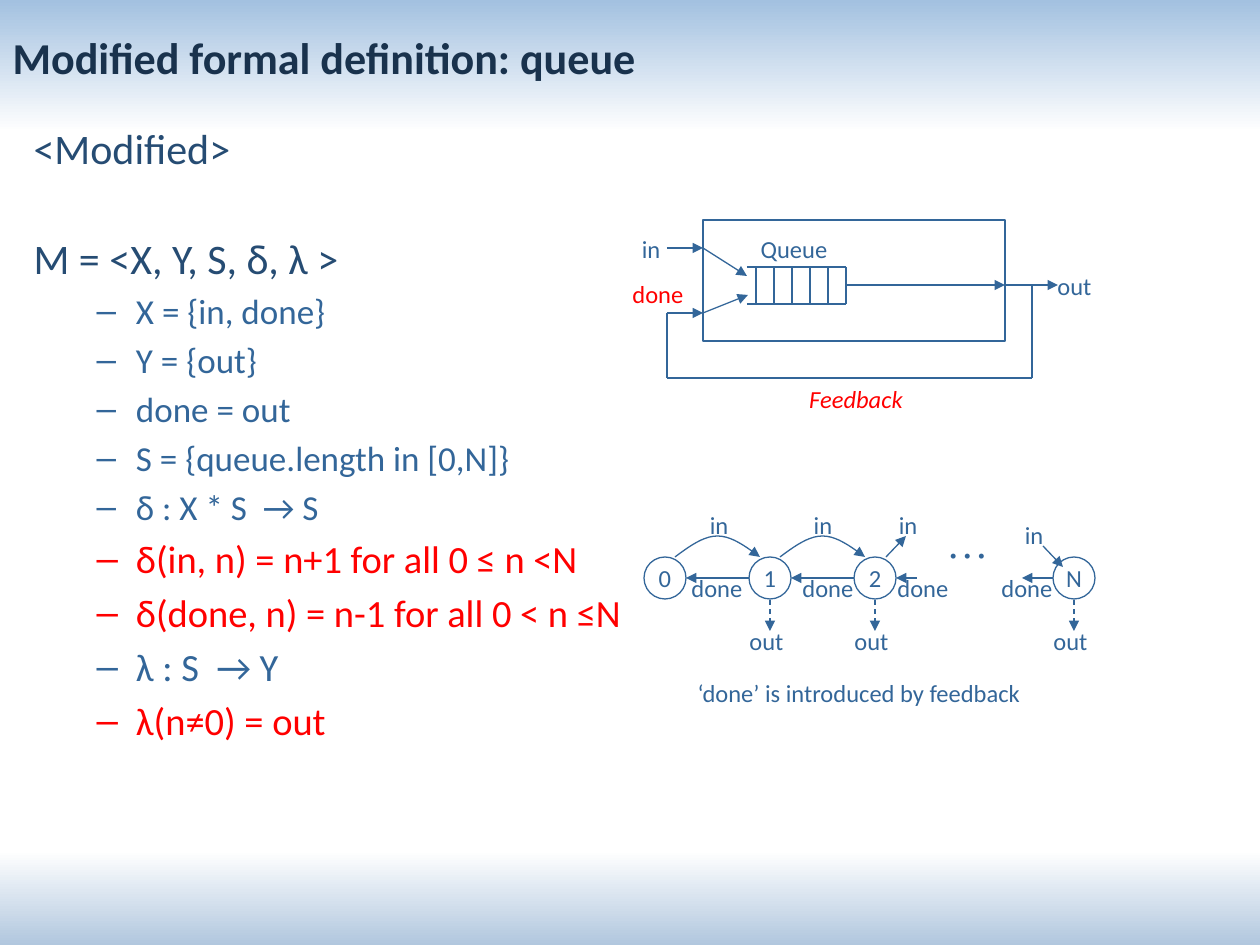
from copy import deepcopy
from itertools import pairwise

from lxml.etree import SubElement
from pptx import Presentation
from pptx.dml.color import RGBColor as RGB
from pptx.enum.dml import MSO_LINE as Dash
from pptx.enum.shapes import MSO_CONNECTOR as Link, MSO_SHAPE as Form
from pptx.enum.text import MSO_ANCHOR as Anchor, MSO_AUTO_SIZE as Fit, PP_ALIGN as Align
from pptx.oxml.ns import qn
from pptx.util import Inches, Pt

UNIT = Inches(1) / 126
FONT = "Calibri"
BLUE = RGB(0x33, 0x66, 0x99)
NAVY = RGB(0x26, 0x4C, 0x73)
DARK = RGB(0x19, 0x32, 0x4D)
RED = RGB(0xFF, 0x00, 0x00)
SKY = RGB(0xA3, 0xC1, 0xE0)
HAZE = RGB(0xB1, 0xC7, 0xDE)
WHITE = RGB(0xFF, 0xFF, 0xFF)

RADIUS = 21
MID = 578
STATES = {"0": 665, "1": 770, "2": 875, "N": 1074}
ITEMS = [
    ("X = {in, done}", 20, BLUE),
    ("Y = {out}", 20, BLUE),
    ("done = out", 20, BLUE),
    ("S = {queue.length in [0,N]}", 20, BLUE),
    ("δ : X * S  → S", 20, BLUE),
    ("δ(in, n) = n+1 for all 0 ≤ n <N", 22, RED),
    ("δ(done, n) = n-1 for all 0 < n ≤N", 22, RED),
    ("λ : S  → Y", 22, BLUE),
    ("λ(n≠0) = out", 22, RED),
]


def px(*nums):
    return [round(n * UNIT) for n in nums]


def style(para, size, color, face=FONT):
    for run in para.runs:
        run.font.size, run.font.name = Pt(size), face
        run.font.color.rgb = color


def place(shape, x, y, w, h):
    shape.left, shape.top, shape.width, shape.height = px(x, y, w, h)


def ink(line, tip=False):
    """Give a line its colour and width, and an arrowhead if asked."""
    line.color.rgb, line.width = BLUE, Pt(0.75)
    if tip:
        SubElement(line._get_or_add_ln(), qn("a:tailEnd"), type="triangle")


def stroke(slide, x1, y1, x2, y2, tip=False, dash=False):
    link = slide.shapes.add_connector(Link.STRAIGHT, *px(x1, y1, x2, y2))
    SubElement(link._element.spPr, qn("a:effectLst"))
    if dash:
        link.line.dash_style = Dash.DASH
    ink(link.line, tip)


def hollow(shape, tip=False):
    shape.shadow.inherit = False
    shape.fill.background()
    ink(shape.line, tip)


def center(frame, text, color=BLUE):
    frame.word_wrap = False
    frame.vertical_anchor = Anchor.MIDDLE
    para = frame.paragraphs[0]
    para.text, para.alignment = text, Align.CENTER
    style(para, 14, color)
    return para


def label(slide, text, x, y, w, color=BLUE):
    frame = slide.shapes.add_textbox(*px(x, y, w, 42)).text_frame
    frame.auto_size = Fit.SHAPE_TO_FIT_TEXT
    return center(frame, text, color)


def arc(slide, x, y, w, h):
    """Draw an arched arrow from (x, y) to (x + w, y), h high."""
    half = 10
    spots = []
    for i in range(2 * half + 1):
        t = 1 - abs(i / half - 1)
        spots.append(px(x + w * i / (2 * half), y - h * (1.5 * t - 0.5 * t**3)))
    path = slide.shapes.build_freeform(*spots[0])
    path.add_line_segments(spots[1:], close=False)
    hollow(path.convert_to_shape(), tip=True)


def backdrop(slide):
    fill = slide.background.fill
    fill.gradient()
    fill.gradient_angle = 270
    stops = slide._element.find(".//" + qn("a:gsLst"))
    stops.extend([deepcopy(stop) for stop in stops])
    marks = [(0, SKY), (0.14, WHITE), (0.9, WHITE), (1, HAZE)]
    for stop, (spot, color) in zip(fill.gradient_stops, marks):
        stop.position, stop.color.rgb = spot, color


def heading(slide):
    title = slide.shapes.title
    place(title, 0, 0, 696, 94)
    frame = title.text_frame
    frame.auto_size, frame.vertical_anchor = Fit.NONE, Anchor.MIDDLE
    frame.margin_top = Inches(0.2)
    para = frame.paragraphs[0]
    para.text, para.alignment = "Modified formal definition: queue", Align.LEFT
    style(para, 25.2, DARK)
    para.runs[0].font.bold = True


def body(slide):
    shape = slide.placeholders[1]
    place(shape, 21, 116, 1218, 777)
    frame = shape.text_frame
    frame.auto_size = Fit.NONE
    heads = [("<Modified>", 0), ("M = <X, Y, S, δ, λ >", 34)]
    for i, (text, gap) in enumerate(heads):
        para = frame.add_paragraph() if i else frame.paragraphs[0]
        para.text = text
        props = para._p.get_or_add_pPr()
        props.set("marL", "0")
        props.set("indent", "0")
        SubElement(props, qn("a:buNone"))
        para.space_before = Pt(gap)
        style(para, 24, NAVY)
    for text, size, color in ITEMS:
        para = frame.add_paragraph()
        para.text, para.level = text, 1
        style(para, size, color)


def chain(slide):
    """Draw the state diagram."""
    for name, x in STATES.items():
        ring = slide.shapes.add_shape(
            Form.OVAL, *px(x - RADIUS, MID - RADIUS, 2 * RADIUS, 2 * RADIUS))
        hollow(ring)
        center(ring.text_frame, name)
        if name != "0":
            stroke(slide, x, 600, x, 631, tip=True, dash=True)
            label(slide, "out", x - 33, 620, 59)
    for name in "01":
        arc(slide, STATES[name] + 10, 557, 85, 21)
    stroke(slide, 886, 557, 906, 536, tip=True)
    stroke(slide, 1043, 546, 1063, 567, tip=True)
    for x1, x2 in [(749, 686), (854, 791), (917, 896), (1053, 1022)]:
        stroke(slide, x1, MID, x2, MID, tip=True)
    for x, y in [(697, 504), (801, 504), (886, 504), (1012, 514)]:
        label(slide, "in", x, y, 44)
    for x in (679, 790, 885, 989):
        label(slide, "done", x, 567, 76)
    label(slide, "‘done’ is introduced by feedback", 685, 672, 348)
    dots = slide.shapes.add_textbox(*px(934, 510, 68, 63)).text_frame
    dots.text, dots.word_wrap = "…", False
    style(dots.paragraphs[0], 24, BLUE, "Times New Roman")


def queue(slide):
    """Draw the queue with its feedback loop."""
    hollow(slide.shapes.add_shape(Form.RECTANGLE, *px(703, 220, 302, 121)))
    for y in (267, 304):
        stroke(slide, 747, y, 846, y)
    for x in range(756, 847, 18):
        stroke(slide, x, 267, x, 304)
    arrows = [
        (667, 248, 703, 248), (703, 248, 747, 276),
        (667, 313, 703, 313), (703, 313, 748, 295),
        (846, 285, 1005, 285), (1005, 285, 1058, 285),
    ]
    for ends in arrows:
        stroke(slide, *ends, tip=True)
    loop = [(667, 313), (667, 378), (1032, 378), (1032, 285)]
    for start, end in pairwise(loop):
        stroke(slide, *start, *end)
    label(slide, "Queue", 748, 228, 92)
    label(slide, "in", 629, 228, 44)
    label(slide, "out", 1045, 265, 59)
    label(slide, "done", 620, 273, 76, RED)
    note = label(slide, "Feedback", 796, 378, 120, RED)
    note.runs[0].font.italic = True


def main():
    deck = Presentation()
    deck.slide_width, deck.slide_height = px(1260, 945)
    slide = deck.slides.add_slide(deck.slide_layouts[1])
    backdrop(slide)
    heading(slide)
    body(slide)
    chain(slide)
    queue(slide)
    deck.save("out.pptx")


if __name__ == "__main__":
    main()
